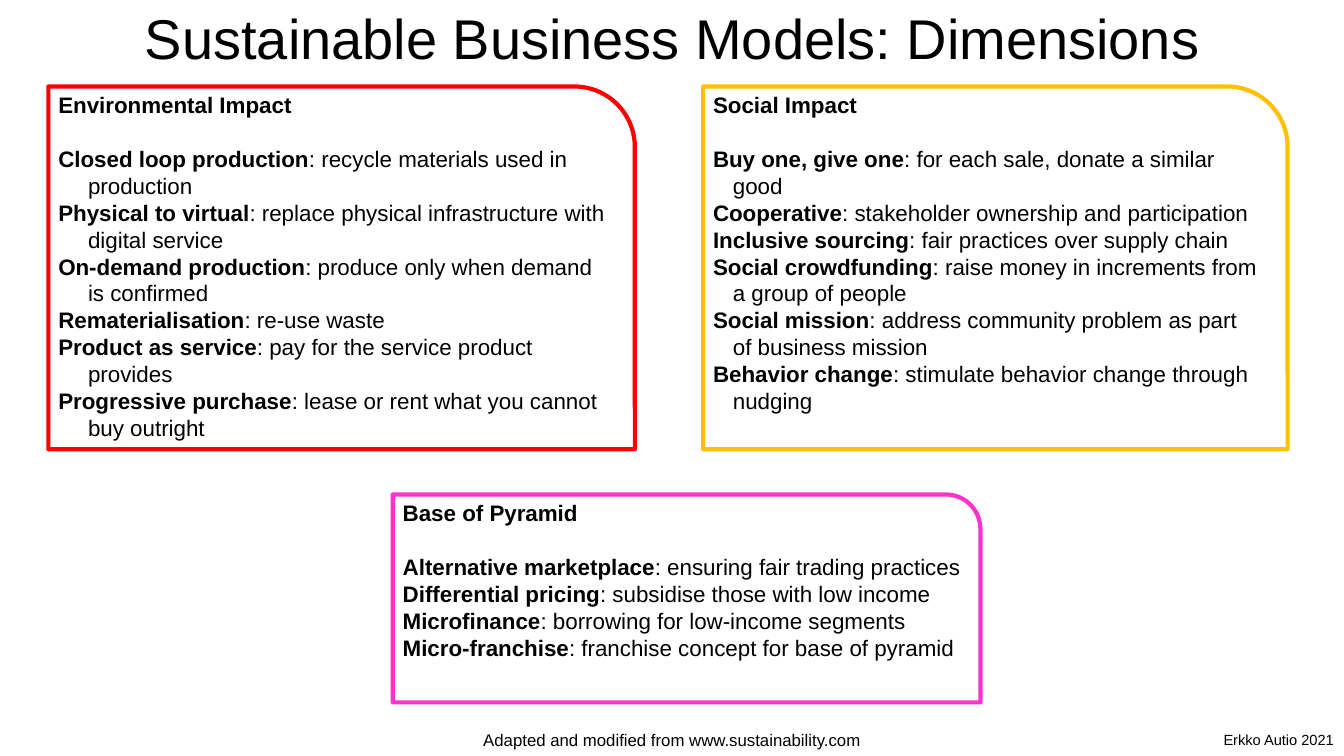
"""Build the slide on the dimensions of sustainable business models."""
from pptx import Presentation
from pptx.dml.color import RGBColor
from pptx.enum.shapes import MSO_SHAPE
from pptx.enum.text import MSO_ANCHOR, MSO_AUTO_SIZE, PP_ALIGN
from pptx.util import Cm, Pt

ROUNDED_CORNER = MSO_SHAPE.ROUND_1_RECTANGLE
TOP, MIDDLE = MSO_ANCHOR.TOP, MSO_ANCHOR.MIDDLE
LEFT, CENTER, RIGHT = PP_ALIGN.LEFT, PP_ALIGN.CENTER, PP_ALIGN.RIGHT
FONT = "Arial"
BLACK = "000000"
LINE_PITCH = Pt(19.2)

TITLE = "Sustainable Business Models: Dimensions"
DIMENSIONS = [
    {"heading": "Environmental Impact", "color": "FF0000",
     "box": (1.22, 2.18, 14.78, 9.14), "indent": 0.75,
     "models": [
         ("Closed loop production", "recycle materials used in production"),
         ("Physical to virtual", "replace physical infrastructure with digital service"),
         ("On-demand production", "produce only when demand is confirmed"),
         ("Rematerialisation", "re-use waste"),
         ("Product as service", "pay for the service product provides"),
         ("Progressive purchase", "lease or rent what you cannot buy outright")]},
    {"heading": "Social Impact", "color": "FFC000",
     "box": (17.72, 2.18, 14.73, 9.14), "indent": 0.5,
     "models": [
         ("Buy one, give one", "for each sale, donate a similar good"),
         ("Cooperative", "stakeholder ownership and participation"),
         ("Inclusive sourcing", "fair practices over supply chain"),
         ("Social crowdfunding", "raise money in increments from a group of people"),
         ("Social mission", "address community problem as part of business mission"),
         ("Behavior change", "stimulate behavior change through nudging")]},
    {"heading": "Base of Pyramid", "color": "FF33CC",
     "box": (9.9, 12.46, 14.81, 5.24), "indent": 0.49,
     "models": [
         ("Alternative marketplace", "ensuring fair trading practices"),
         ("Differential pricing", "subsidise those with low income"),
         ("Microfinance", "borrowing for low-income segments"),
         ("Micro-franchise", "franchise concept for base of pyramid")]},
]
FOOTERS = [
    ("Adapted and modified from www.sustainability.com", (11.91, 18.27, 10.06, 0.77), 12, CENTER),
    ("Erkko Autio 2021", (30.5, 18.29, 3.37, 0.7), 10.5, RIGHT),
]


def rgb(color):
    return RGBColor.from_string(color)


def lengths(values):
    return [Cm(value) for value in values]


def style(paragraph, size, alignment):
    paragraph.alignment = alignment
    paragraph.font.name = FONT
    paragraph.font.size = Pt(size)
    paragraph.font.color.rgb = rgb(BLACK)


def add_title(slide, width):
    title = slide.shapes.title
    title.left, title.top, title.width, title.height = 0, 0, width, Cm(1.85)
    frame = title.text_frame
    frame.text = TITLE
    frame.auto_size = MSO_AUTO_SIZE.NONE
    frame.vertical_anchor = MIDDLE
    frame.margin_left = frame.margin_right = frame.margin_top = frame.margin_bottom = 0
    style(frame.paragraphs[0], 40, CENTER)


def add_dimension(slide, dimension):
    shape = slide.shapes.add_shape(ROUNDED_CORNER, *lengths(dimension["box"]))
    shape.shadow.inherit = False
    shape.fill.background()
    shape.line.color.rgb = rgb(dimension["color"])
    shape.line.width = Pt(3)
    frame = shape.text_frame
    frame.word_wrap = True
    frame.vertical_anchor = TOP
    heading = frame.paragraphs[0]
    heading.text = dimension["heading"]
    heading.line_spacing = heading.space_after = LINE_PITCH
    style(heading, 16, LEFT)
    heading.font.bold = True
    indent = Cm(dimension["indent"])
    for name, description in dimension["models"]:
        paragraph = frame.add_paragraph()
        properties = paragraph._p.get_or_add_pPr()
        properties.set("marL", str(indent))
        properties.set("indent", str(-indent))
        paragraph.line_spacing = LINE_PITCH
        style(paragraph, 16, LEFT)
        name_run = paragraph.add_run()
        name_run.text = name
        name_run.font.bold = True
        paragraph.add_run().text = f": {description}"


def add_footer(slide, text, box, size, alignment):
    frame = slide.shapes.add_textbox(*lengths(box)).text_frame
    frame.word_wrap = False
    frame.auto_size = MSO_AUTO_SIZE.SHAPE_TO_FIT_TEXT
    frame.text = text
    style(frame.paragraphs[0], size, alignment)


def main():
    presentation = Presentation()
    presentation.slide_width, presentation.slide_height = Cm(33.87), Cm(19.05)
    slide = presentation.slides.add_slide(presentation.slide_layouts[5])
    add_title(slide, presentation.slide_width)
    for dimension in DIMENSIONS:
        add_dimension(slide, dimension)
    for footer in FOOTERS:
        add_footer(slide, *footer)
    presentation.save("out.pptx")


if __name__ == "__main__":
    main()
